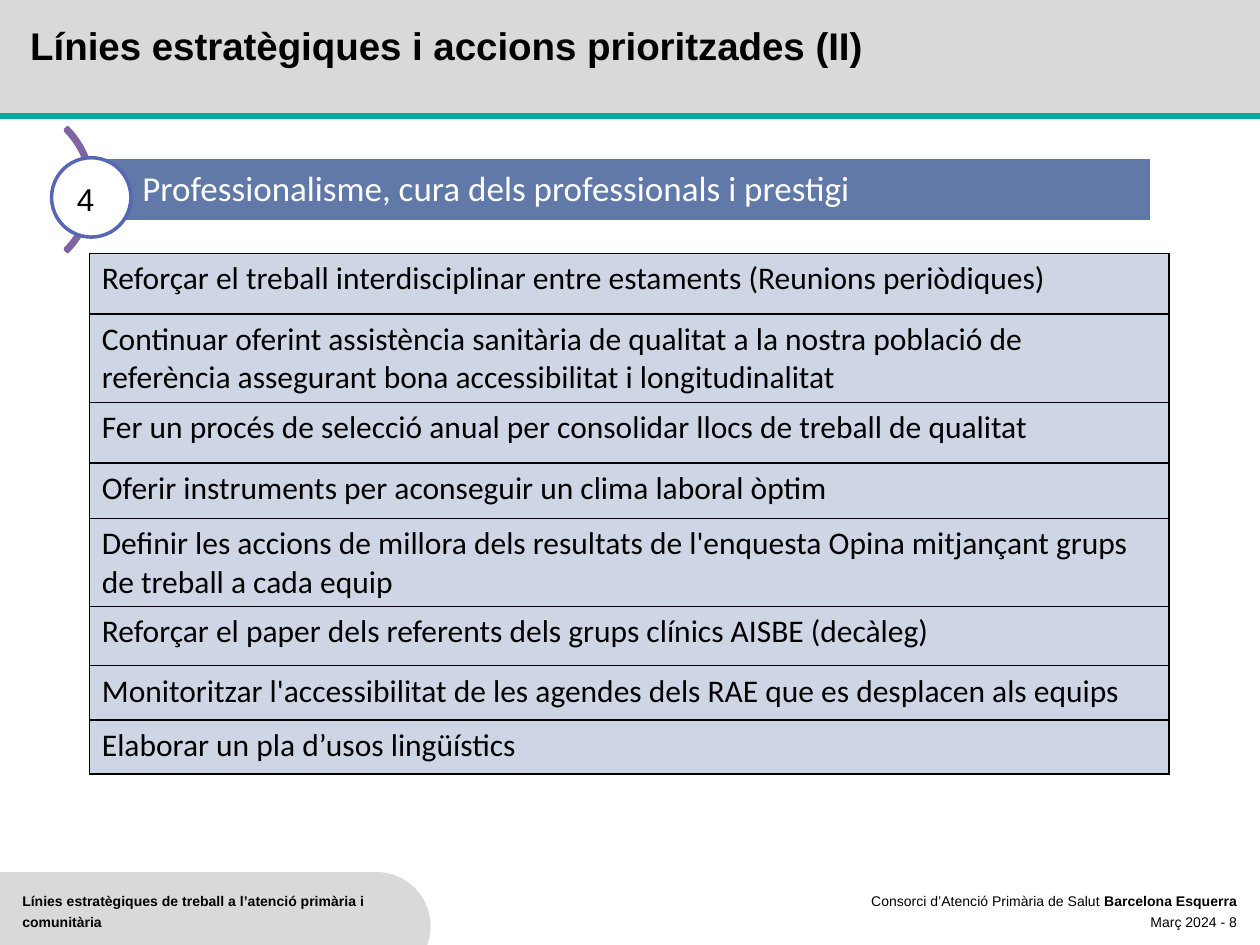
import pptx
import pptx.util
import pptx.dml.color
import pptx.enum.shapes
import pptx.enum.text
import pptx.oxml
import pptx.oxml.ns

Cm, Pt = pptx.util.Cm, pptx.util.Pt
RGBColor = pptx.dml.color.RGBColor
Kind = pptx.enum.shapes.MSO_SHAPE
Align = pptx.enum.text.PP_ALIGN

BLACK = RGBColor(0x00, 0x00, 0x00)
WHITE = RGBColor(0xFF, 0xFF, 0xFF)
GREY = RGBColor(0xD9, 0xD9, 0xD9)
TEAL = RGBColor(0x00, 0xAA, 0x9E)
STEEL = RGBColor(0x61, 0x79, 0xA8)
BLUE = RGBColor(0x57, 0x67, 0xB4)
PURPLE = RGBColor(0x80, 0x64, 0xA2)
PALE = RGBColor(0xCE, 0xD5, 0xE4)

ACTIONS = [
    ("Reforçar el treball interdisciplinar entre estaments (Reunions periòdiques)", 1.22),
    ("Continuar oferint assistència sanitària de qualitat a la nostra població de "
     "referència assegurant bona accessibilitat i longitudinalitat", 1.78),
    ("Fer un procés de selecció anual per consolidar llocs de treball de qualitat", 1.22),
    ("Oferir instruments per aconseguir un clima laboral òptim", 1.12),
    ("Definir les accions de millora dels resultats de l'enquesta Opina mitjançant "
     "grups de treball a cada equip", 1.78),
    ("Reforçar el paper dels referents dels grups clínics AISBE (decàleg)", 1.19),
    ("Monitoritzar l'accessibilitat de les agendes dels RAE que es desplacen als equips", 1.09),
    ("Elaborar un pla d’usos lingüístics", 1.09),
]


def add_run(para, text, size, color=BLACK, name="Arial", bold=False):
    run = para.add_run()
    run.text = text
    font = run.font
    font.size, font.name, font.bold = Pt(size), name, bold
    font.color.rgb = color


def add_form(slide, kind, box, fill=None, line=None):
    form = slide.shapes.add_shape(kind, *map(Cm, box))
    form.shadow.inherit = False
    if fill is None:
        form.fill.background()
    else:
        form.fill.solid()
        form.fill.fore_color.rgb = fill
    if line is None:
        form.line.fill.background()
    else:
        form.line.color.rgb = line
        form.line.width = Pt(2)
    return form


def add_text(slide, box, paras, size, space=None, align=Align.LEFT, grow=False):
    """Each paragraph is a list of (text, bold) runs; space is the line pitch in points."""
    frame = slide.shapes.add_textbox(*map(Cm, box)).text_frame
    frame.word_wrap = True
    if grow:
        frame.auto_size = pptx.enum.text.MSO_AUTO_SIZE.SHAPE_TO_FIT_TEXT
    for i, runs in enumerate(paras):
        para = frame.add_paragraph() if i else frame.paragraphs[0]
        para.alignment = align
        if space:
            para.line_spacing = Pt(space)
        for text, bold in runs:
            add_run(para, text, size, bold=bold)


def add_header(slide, box):
    x, y, w, h = box
    add_form(slide, Kind.RECTANGLE, box, GREY)
    rule = slide.shapes.add_connector(
        pptx.enum.shapes.MSO_CONNECTOR.STRAIGHT, Cm(x), Cm(y + h), Cm(x + w), Cm(y + h))
    rule.line.color.rgb = TEAL
    rule.line.width = Pt(3)
    rule._element.spPr.append(pptx.oxml.parse_xml(
        f"<a:effectLst {pptx.oxml.ns.nsdecls('a')}/>"))
    add_text(slide, (x + 0.36, y + 0.48, 21.67, 1.04),
             [[("Línies estratègiques i accions prioritzades (II)", True)]],
             22, space=22, grow=True)


def add_footer(slide, box):
    x, y, w, h = box
    tab = 7.67
    add_form(slide, Kind.RECTANGLE, (x, y, tab, h), GREY)
    add_form(slide, Kind.OVAL, (x + tab - 1.17, y, 2.18, 2.18), GREY)
    add_text(slide, (x + 0.2, y + 0.2, tab, 1.19),
             [[("Línies estratègiques de treball a l’atenció primària i comunitària", True)]],
             8, space=12)
    add_text(slide, (x + w - 8.26, y + 0.2, 8.05, 1.27),
             [[("Consorci d’Atenció Primària de Salut ", False), ("Barcelona Esquerra", True)],
              [("Març 2024 - 8", False)]],
             8, space=12, align=Align.RIGHT)


def add_banner(slide, box):
    x, y, w, h = box
    arc = add_form(slide, Kind.BLOCK_ARC, (x - 3.48, y - 1.12, 3.53, 3.53), line=PURPLE)
    for i, value in enumerate((189, 27, 0.02)):
        arc.adjustments[i] = value

    bar = add_form(slide, Kind.RECTANGLE, box, STEEL, WHITE)
    frame = bar.text_frame
    frame.word_wrap = True
    frame.vertical_anchor = pptx.enum.text.MSO_ANCHOR.MIDDLE
    frame.margin_left = Cm(1.04)
    frame.margin_right = frame.margin_top = frame.margin_bottom = Cm(0.15)
    para = frame.paragraphs[0]
    para.alignment = Align.LEFT
    para.line_spacing = 0.9
    add_run(para, "Professionalisme, cura dels professionals i prestigi", 20, WHITE, "Calibri")

    add_form(slide, Kind.OVAL, (x - 0.79, y, 1.6, 1.6), WHITE, BLUE)
    add_text(slide, (x - 0.53, y + 0.33, 1.04, 1.02), [[("4", False)]], 18, grow=True)


def add_edges(cell):
    props = cell._tc.get_or_add_tcPr()
    for side in "LRTB":
        props.append(pptx.oxml.parse_xml(
            f'<a:ln{side} {pptx.oxml.ns.nsdecls("a")} w="12700"><a:solidFill>'
            f'<a:srgbClr val="{BLACK}"/></a:solidFill></a:ln{side}>'))


def add_actions(slide, box):
    table = slide.shapes.add_table(len(ACTIONS), 1, *map(Cm, box)).table
    table.first_row = table.horz_banding = False
    for i, (text, height) in enumerate(ACTIONS):
        table.rows[i].height = Cm(height)
        cell = table.cell(i, 0)
        add_edges(cell)
        cell.fill.solid()
        cell.fill.fore_color.rgb = PALE
        add_run(cell.text_frame.paragraphs[0], text, 18, name="Calibri")


def main():
    deck = pptx.Presentation()
    deck.slide_width, deck.slide_height = Cm(25.4), Cm(19.05)
    slide = deck.slides.add_slide(deck.slide_layouts[6])
    add_footer(slide, (0, 17.58, 25.4, 1.83))
    add_header(slide, (0, 0, 25.4, 2.34))
    add_actions(slide, (1.8, 5.11, 21.77, sum(height for _, height in ACTIONS)))
    add_banner(slide, (1.83, 3.18, 21.39, 1.3))
    deck.save("out.pptx")


if __name__ == "__main__":
    main()
